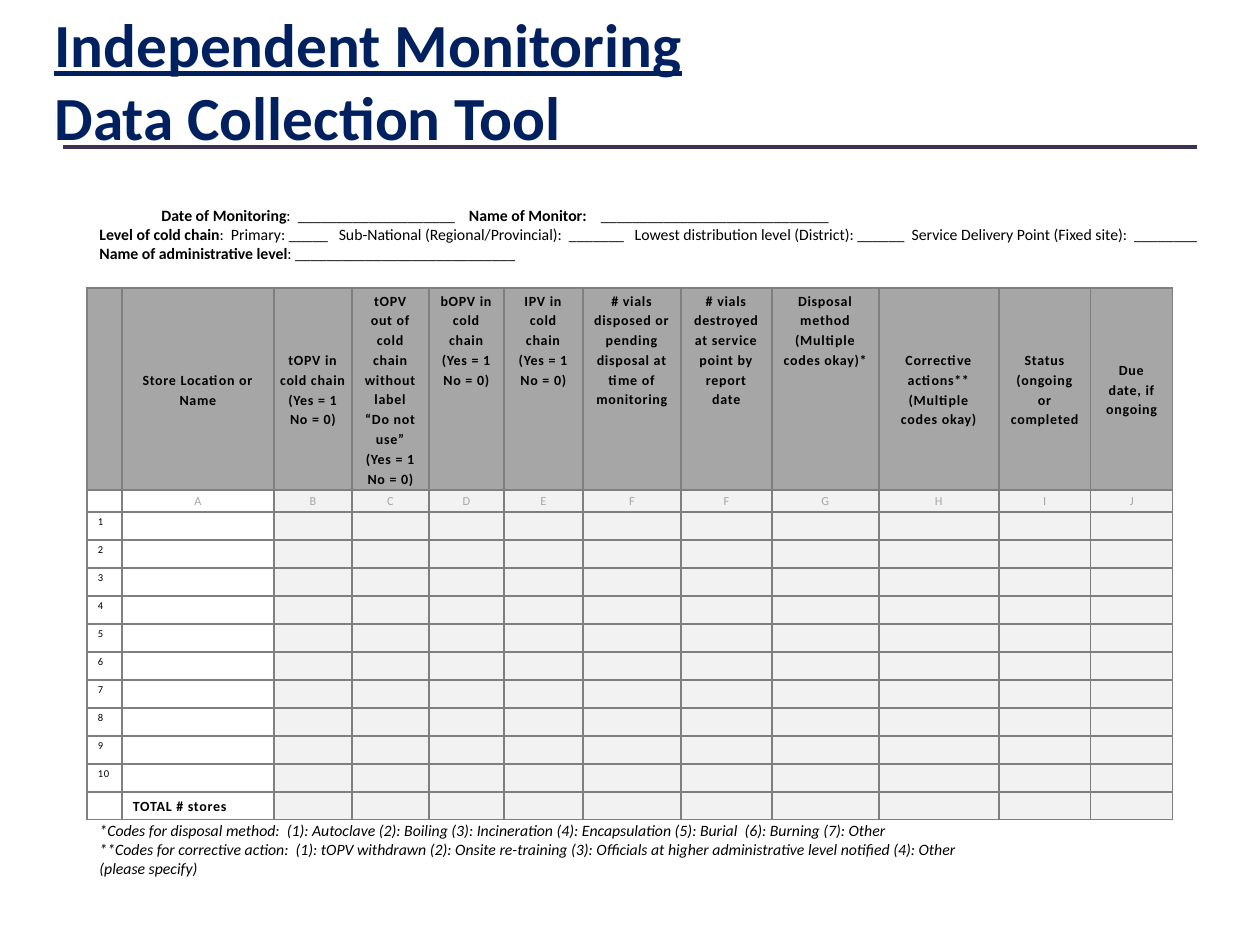
from lxml.etree import SubElement
from pptx import Presentation
from pptx.dml.color import RGBColor
from pptx.enum.shapes import MSO_CONNECTOR
from pptx.enum.text import MSO_ANCHOR as ANCHOR, MSO_AUTO_SIZE as AUTO, PP_ALIGN as ALIGN
from pptx.oxml import parse_xml
from pptx.oxml.ns import nsdecls, qn
from pptx.util import Pt

PX = 914400 / 126
FONT = "Calibri"
COLORS = {
    "title": "002060", "rule": "403152", "text": "000000", "border": "7F7F7F",
    "header": "A6A6A6", "letter": "A6A6A6", "entry": "F2F2F2",
}


def add_run(paragraph, text, size, color="text", bold=False, italic=False, underline=False):
    run = paragraph.add_run()
    run.text = text
    font = run.font
    font.name, font.size = FONT, Pt(size)
    font.bold, font.italic, font.underline = bold, italic, underline
    font.color.rgb = RGBColor.from_string(COLORS[color])
    return run


def add_text(box, paragraphs, anchor=ANCHOR.TOP):
    frame = slide.shapes.add_textbox(*[round(v * PX) for v in box]).text_frame
    frame.word_wrap = True
    frame.auto_size = AUTO.SHAPE_TO_FIT_TEXT
    frame.vertical_anchor = anchor
    for i, runs in enumerate(paragraphs):
        paragraph = frame.add_paragraph() if i else frame.paragraphs[0]
        for text, style in runs:
            add_run(paragraph, text, **style)
    return frame


prs = Presentation()
prs.slide_width, prs.slide_height = round(1260 * PX), round(945 * PX)
slide = prs.slides.add_slide(prs.slide_layouts[6])

rule = slide.shapes.add_connector(
    MSO_CONNECTOR.STRAIGHT, *[round(v * PX) for v in (63, 147, 1197, 147)])
rule.line.color.rgb = RGBColor.from_string(COLORS["rule"])
rule.line.width = Pt(2.25)
SubElement(rule.element.spPr, qn("a:effectLst"))

headers = [
    "", "Store Location or Name", "tOPV in cold chain (Yes = 1\nNo = 0)",
    "tOPV out of cold chain without label “Do not use” (Yes = 1\nNo = 0)",
    "bOPV in cold chain (Yes = 1\nNo = 0)", "IPV in cold chain (Yes = 1\nNo = 0)",
    "# vials disposed or pending disposal at time of monitoring",
    "# vials destroyed at service point by report date",
    "Disposal method (Multiple codes okay)*",
    "Corrective actions** (Multiple codes okay)",
    "Status (ongoing or completed", "Due date, if ongoing",
]
store_rows = [[str(n)] + [""] * 11 for n in range(1, 11)]
total_row = ["", "TOTAL # stores"] + [""] * 10
rows = [headers, ["", *"ABCDEFFGHIJ"], *store_rows, total_row]
col_widths = [35, 152, 78, 77, 75, 79, 98, 91, 107, 120, 92, 82]
row_heights = [202, 22] + [28] * 11
middle_headers = (1, 2, 9, 10, 11)
total = len(rows) - 1

table = slide.shapes.add_table(
    len(rows), len(col_widths),
    *[round(v * PX) for v in (87, 288, sum(col_widths), sum(row_heights))]).table
table.first_row = table.horz_banding = False
for column, width in zip(table.columns, col_widths):
    column.width = round(width * PX)
for row, height in zip(table.rows, row_heights):
    row.height = round(height * PX)

for r, texts in enumerate(rows):
    for c, text in enumerate(texts):
        cell = table.cell(r, c)
        cell.margin_left = cell.margin_right = round((0 if c == 2 else 11) * PX)
        cell.margin_top = cell.margin_bottom = round(2 * PX)
        if r == total or (r == 0 and c in middle_headers):
            cell.vertical_anchor = ANCHOR.MIDDLE
        if r == 0 or c > 1:
            cell.fill.solid()
            cell.fill.fore_color.rgb = RGBColor.from_string(COLORS["entry" if r else "header"])
        else:
            cell.fill.background()

        paragraph = cell.text_frame.paragraphs[0]
        paragraph.line_spacing = 1.15
        if r < 2:
            paragraph.alignment = ALIGN.CENTER
        else:
            paragraph.alignment = ALIGN.LEFT if r == total else ALIGN.JUSTIFY
        size = 8 if r in (0, total) else 7 if r == 1 else 6
        if text:
            for i, part in enumerate(text.split("\n")):
                if i:
                    paragraph.add_line_break()
                run = add_run(paragraph, part, size, "letter" if r == 1 else "text",
                              bold=r in (0, total))
                run.font._element.set("spc", "40")
        else:
            SubElement(paragraph._p, qn("a:endParaRPr")).set("sz", str(size * 100))

        for i, side in enumerate("LRTB"):
            cell._tc.get_or_add_tcPr().insert(i, parse_xml(
                f'<a:ln{side} {nsdecls("a")} w="12700"><a:solidFill>'
                f'<a:srgbClr val="{COLORS["border"]}"/></a:solidFill></a:ln{side}>'))

label = {"size": 9, "bold": True}
blank = {"size": 9}
code = {"size": 9, "italic": True}
heading = {"size": 35, "color": "title", "bold": True}

details = add_text((87, 199, 1153, 71), [
    [("Date of Monitoring", label), (":  ____________________    ", blank),
     ("Name of Monitor:    ", label), ("_____________________________", blank)],
    [("Level of cold chain", label),
     (":  Primary: _____   Sub-National (Regional/Provincial):  _______   "
      "Lowest distribution level (District): ______  "
      "Service Delivery Point (Fixed site):  ________", blank)],
    [("Name of administrative level", label), (": ____________________________", blank)],
], ANCHOR.MIDDLE)
details.paragraphs[0]._p.get_or_add_pPr().set("indent", str(round(62 * PX)))

add_text((87, 815, 914, 71), [
    [("*Codes for disposal method:  (1): Autoclave (2): Boiling (3): Incineration "
      "(4): Encapsulation (5): Burial  (6): Burning (7): Other", code)],
    [("**Codes for corrective action:  (1): tOPV withdrawn (2): Onsite re-training "
      "(3): Officials at higher administrative level notified (4): Other (please specify)", code)],
])

add_text((42, 0, 1218, 161), [
    [("Independent Monitoring", {**heading, "underline": True}), (" ", heading)],
    [("Data Collection Tool", heading)],
])

prs.save("out.pptx")
